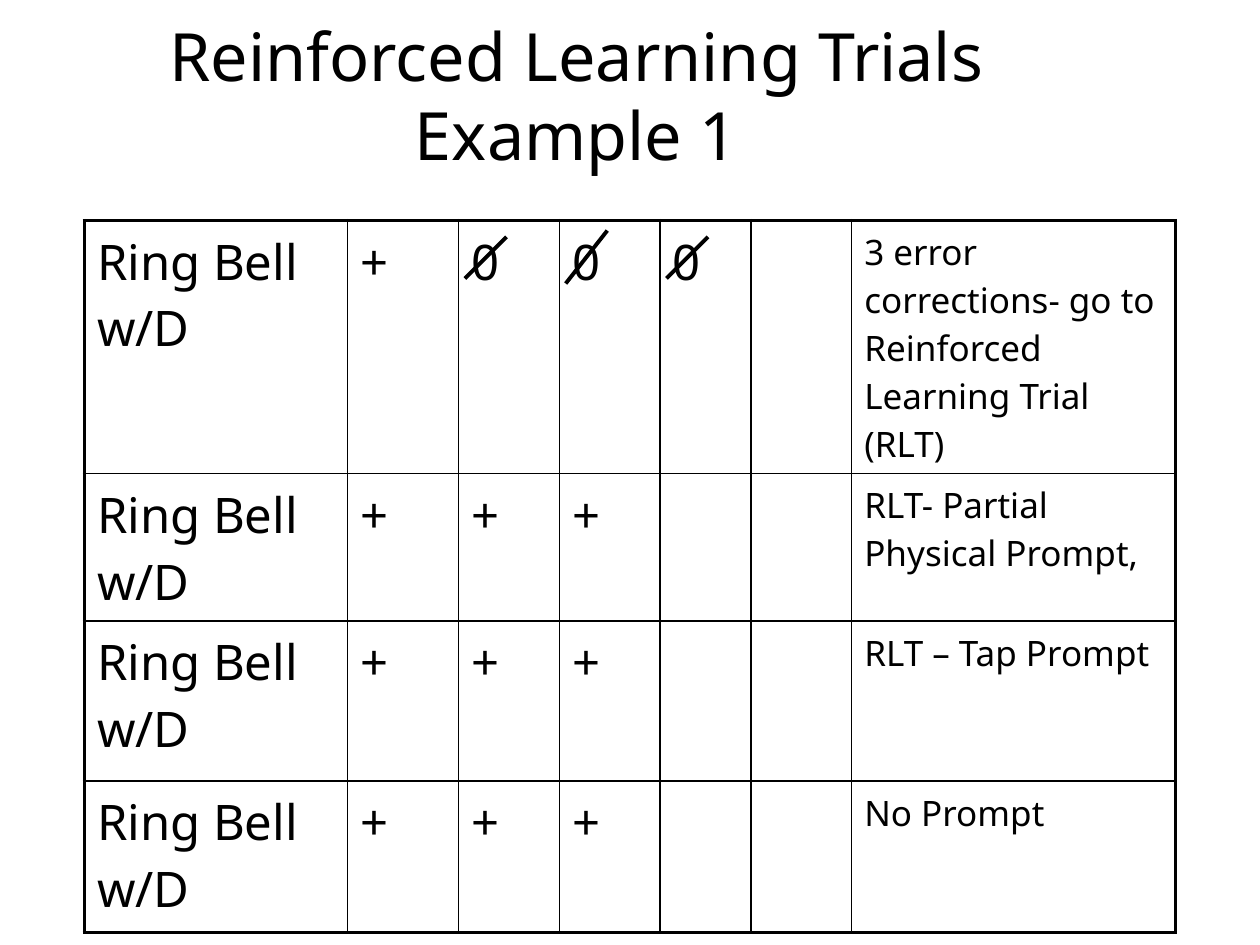
from dataclasses import dataclass

from lxml import etree
from pptx import Presentation
from pptx import util as u
from pptx.dml.color import RGBColor
from pptx.enum import shapes, text
from pptx.oxml import ns


@dataclass(frozen=True)
class Theme:
    font: str = "Noto Sans"
    ink: str = "000000"
    title: float = 38
    mark: float = 28
    note: float = 20
    thick: float = 2.25
    thin: float = 1
    inset: float = 0.06
    indent: float = 0.04


class SlideBuilder:
    def __init__(self, page, theme):
        self.page = page
        self.theme = theme
        self.ink = RGBColor.from_string(theme.ink)

    def style(self, para, size):
        properties = para._p.get_or_add_pPr()
        properties.set("marL", str(u.Inches(self.theme.indent)))
        properties.set("indent", "0")
        para.font.name = self.theme.font
        para.font.size = u.Pt(size)
        para.font.color.rgb = self.ink

    def title(self, wording, left, top, width, height):
        box = self.page.shapes.add_textbox(*map(u.Inches, (left, top, width, height)))
        frame = box.text_frame
        frame.word_wrap = True
        frame.vertical_anchor = text.MSO_ANCHOR.MIDDLE
        frame.margin_left = frame.margin_top = frame.margin_bottom = u.Inches(self.theme.inset)
        frame.margin_right = u.Inches(0.14)
        para = frame.paragraphs[0]
        para.text = wording
        para.alignment = text.PP_ALIGN.CENTER
        self.style(para, self.theme.title)

    def border(self, cell, side, weight):
        properties = cell._tc.get_or_add_tcPr()
        line = etree.SubElement(properties, ns.qn(f"a:ln{side}"), w=str(u.Pt(weight)))
        fill = etree.SubElement(line, ns.qn("a:solidFill"))
        etree.SubElement(fill, ns.qn("a:srgbClr"), val=self.theme.ink)

    def cell(self, cell, wording, size, outer_sides):
        cell.margin_left = cell.margin_right = u.Inches(self.theme.inset)
        cell.margin_top = cell.margin_bottom = u.Inches(self.theme.inset)
        for side in "LRTB":
            weight = self.theme.thick if side in outer_sides else self.theme.thin
            self.border(cell, side, weight)
        cell.fill.background()
        cell.text = wording
        for para in cell.text_frame.paragraphs:
            self.style(para, size)

    def table(self, rows, left, top, widths, heights):
        last_row, last_column = len(heights) - 1, len(widths) - 1
        frame = self.page.shapes.add_table(
            len(heights), len(widths), u.Inches(left), u.Inches(top),
            u.Inches(sum(widths)), u.Inches(sum(heights)))
        table = frame.table
        table.first_row = table.horz_banding = False
        for column, width in zip(table.columns, widths):
            column.width = u.Inches(width)
        for row, height in zip(table.rows, heights):
            row.height = u.Inches(height)
        for r, row in enumerate(rows):
            for c, wording in enumerate(row):
                edges = {"L": c == 0, "R": c == last_column, "T": r == 0, "B": r == last_row}
                outer_sides = [side for side, outer in edges.items() if outer]
                size = self.theme.note if c == last_column else self.theme.mark
                self.cell(table.cell(r, c), wording, size, outer_sides)

    def line(self, start, end):
        line = self.page.shapes.add_connector(
            shapes.MSO_CONNECTOR.STRAIGHT, *map(u.Inches, (*start, *end)))
        line.line.color.rgb = self.ink
        line.line.width = u.Pt(self.theme.thick)
        etree.SubElement(line._element.spPr, ns.qn("a:effectLst"))


def main():
    deck = Presentation()
    deck.slide_width, deck.slide_height = u.Inches(10), u.Inches(7.5)
    page = deck.slides.add_slide(deck.slide_layouts[6])
    builder = SlideBuilder(page, Theme())

    builder.title("Reinforced Learning Trials Example 1", 0.21, 0, 8.77, 1.5)

    trials = [
        ("+000", "3 error corrections- go to Reinforced Learning Trial (RLT)"),
        ("+++", "RLT- Partial Physical Prompt,"),
        ("+++", "RLT – Tap Prompt"),
        ("+++", "No Prompt"),
    ]
    rows = [["Ring Bell\nw/D", *marks, *[""] * (5 - len(marks)), note] for marks, note in trials]
    builder.table(rows, 0.67, 1.75,
                  [2.09, 0.88, 0.8, 0.8, 0.72, 0.8, 2.57], [2.01, 1.17, 1.27, 1.2])

    for left, top, bottom in [(3.69, 1.88, 2.21), (4.49, 1.83, 2.25), (5.29, 1.88, 2.21)]:
        builder.line((left + 0.33, top), (left, bottom))

    deck.save("out.pptx")


if __name__ == "__main__":
    main()
